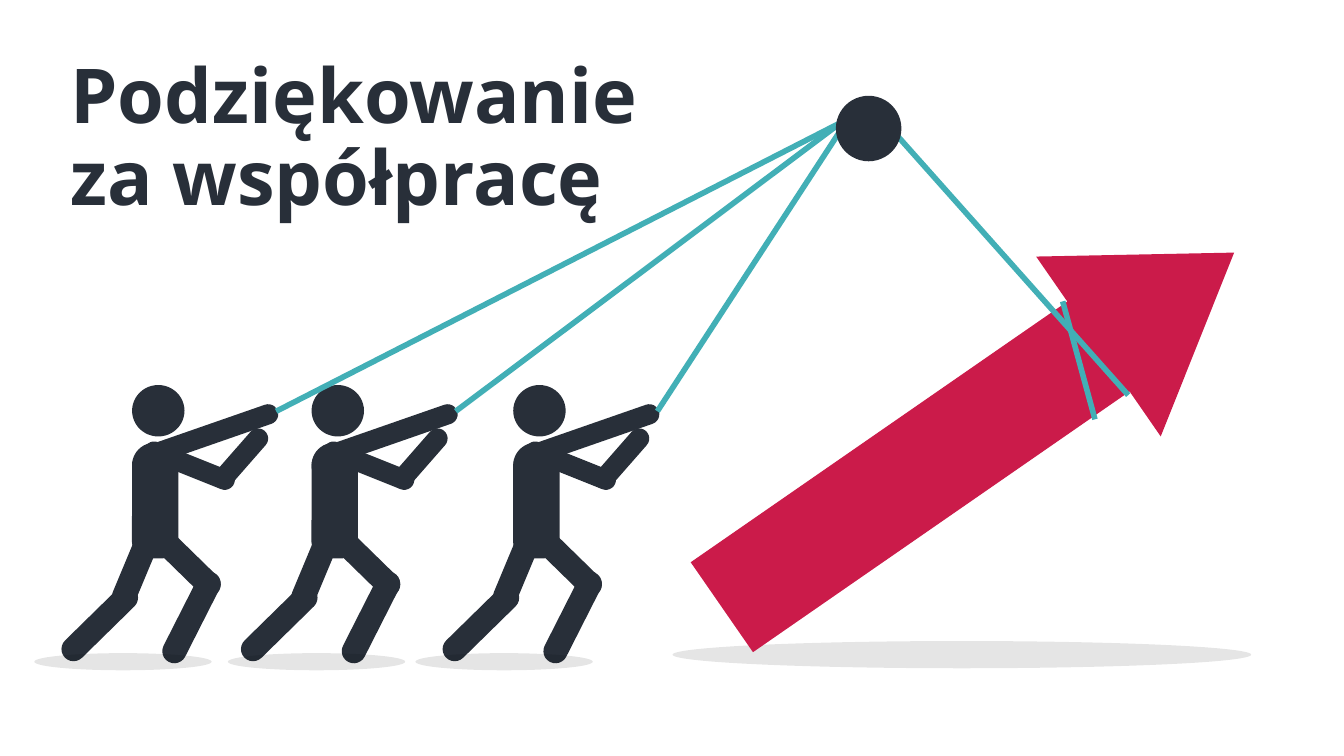
from math import atan2, cos, pi, sin

from lxml.etree import SubElement
from pptx import Presentation
from pptx.dml.color import RGBColor
from pptx.enum.shapes import MSO_CONNECTOR, MSO_SHAPE
from pptx.enum.text import MSO_ANCHOR, MSO_AUTO_SIZE
from pptx.oxml.ns import qn
from pptx.util import Inches, Pt

TITLE_LINES = ["Podziękowanie", "za współpracę"]
FONT = "Noto Sans"
DARK = RGBColor(0x28, 0x2F, 0x39)
RED = RGBColor(0xCB, 0x1B, 0x4A)
TEAL = RGBColor(0x42, 0xAF, 0xB6)
BLACK = RGBColor(0, 0, 0)

ARROW_SHADOW = (6.67, 6.36, 5.74, 0.27)
ARROW = (6.61, 3.18, 6.18, 2.17)
PULLEY = (8.29, 0.95, 0.65, 0.65)
FIGURE_SHADOWS = [(left, 6.48, 1.76, 0.17) for left in (4.12, 2.26, 0.34)]

HEAD = (1.31, 3.82, 0.52, 0.51)
SHOULDER = (1.31, 4.39, 0.46, 0.45)
TORSO = (1.31, 4.46, 0.46, 1.08)
LIMBS = [
    ((1.53, 4.48), (2.23, 4.76), 0.1),
    ((1.63, 5.37), (2.07, 5.8), 0.12),
    ((1.73, 6.46), (2.07, 5.79), 0.12),
    ((1.23, 5.92), (1.48, 5.32), 0.12),
    ((0.73, 6.44), (1.25, 5.93), 0.12),
    ((2.21, 4.75), (2.56, 4.35), 0.1),
    ((1.54, 4.5), (2.66, 4.11), 0.1),
]
HAND = (2.74, 4.08)
FIGURE_ROPES = [(0, (8.43, 1.17)), (1.78, (8.43, 1.15)), (3.78, (8.43, 1.15))]
LOAD_ROPE = ((11.19, 3.92), (8.76, 1.19))
STRAP = ((10.54, 2.99), (10.86, 4.16))
CAP_STEPS = 12


def paint(shape, color):
    shape.shadow.inherit = False
    shape.fill.solid()
    shape.fill.fore_color.rgb = color
    shape.line.fill.background()


def add_solid(shapes, kind, place, color, shift=0):
    left, top, width, height = place
    shape = shapes.add_shape(
        kind, Inches(left + shift), Inches(top), Inches(width), Inches(height)
    )
    paint(shape, color)
    return shape


def add_ground_shadow(page, place):
    shadow = add_solid(page.shapes, MSO_SHAPE.OVAL, place, BLACK)
    color = shadow.fill._xPr.find(qn("a:solidFill"))[0]
    SubElement(color, qn("a:alpha")).set("val", "10000")


def add_limb(shapes, start, end, radius, shift):
    direction = atan2(end[1] - start[1], end[0] - start[0])
    outline = []
    for (x, y), first_angle in ((end, direction - pi / 2), (start, direction + pi / 2)):
        for step in range(CAP_STEPS + 1):
            angle = first_angle + pi * step / CAP_STEPS
            outline.append((
                Inches(x + shift + radius * cos(angle)),
                Inches(y + radius * sin(angle)),
            ))
    builder = shapes.build_freeform(*outline[0])
    builder.add_line_segments(outline[1:], close=True)
    paint(builder.convert_to_shape(), DARK)


def add_figure(page, shift):
    shapes = page.shapes.add_group_shape().shapes
    add_solid(shapes, MSO_SHAPE.OVAL, HEAD, DARK, shift)
    add_solid(shapes, MSO_SHAPE.OVAL, SHOULDER, DARK, shift)
    torso = add_solid(shapes, MSO_SHAPE.ROUNDED_RECTANGLE, TORSO, DARK, shift)
    torso.adjustments[0] = 0.35
    for start, end, radius in LIMBS:
        add_limb(shapes, start, end, radius, shift)


def add_rope(page, start, end):
    rope = page.shapes.add_connector(
        MSO_CONNECTOR.STRAIGHT, *(Inches(value) for value in (*start, *end))
    )
    rope.line.color.rgb = TEAL
    rope.line.width = Pt(4)
    SubElement(rope._element.spPr, qn("a:effectLst"))


def add_title(page):
    box = page.shapes.add_textbox(Inches(0.6), Inches(0.53), Inches(10.58), Inches(1.92))
    frame = box.text_frame
    frame.word_wrap = True
    frame.auto_size = MSO_AUTO_SIZE.SHAPE_TO_FIT_TEXT
    frame.vertical_anchor = MSO_ANCHOR.TOP
    para = frame.paragraphs[0]
    para.line_spacing = 0.9
    for index, line in enumerate(TITLE_LINES):
        if index:
            para.add_line_break()
        span = para.add_run()
        span.text = line
        span.font.name = FONT
        span.font.size = Pt(54)
        span.font.bold = True
        span.font.color.rgb = DARK


def main():
    deck = Presentation()
    deck.slide_width = Inches(13.33)
    deck.slide_height = Inches(7.5)
    page = deck.slides.add_slide(deck.slide_layouts[6])

    add_ground_shadow(page, ARROW_SHADOW)
    add_title(page)
    arrow = add_solid(page.shapes, MSO_SHAPE.RIGHT_ARROW, ARROW, RED)
    arrow.adjustments[0] = 0.5
    arrow.adjustments[1] = 0.754
    arrow.rotation = 325.3

    for shift, _ in FIGURE_ROPES:
        add_figure(page, shift)
    for shift, end in FIGURE_ROPES:
        add_rope(page, (HAND[0] + shift, HAND[1]), end)
    add_rope(page, *LOAD_ROPE)
    add_solid(page.shapes, MSO_SHAPE.OVAL, PULLEY, DARK)
    add_rope(page, *STRAP)
    for place in FIGURE_SHADOWS:
        add_ground_shadow(page, place)

    deck.save("out.pptx")


if __name__ == "__main__":
    main()
